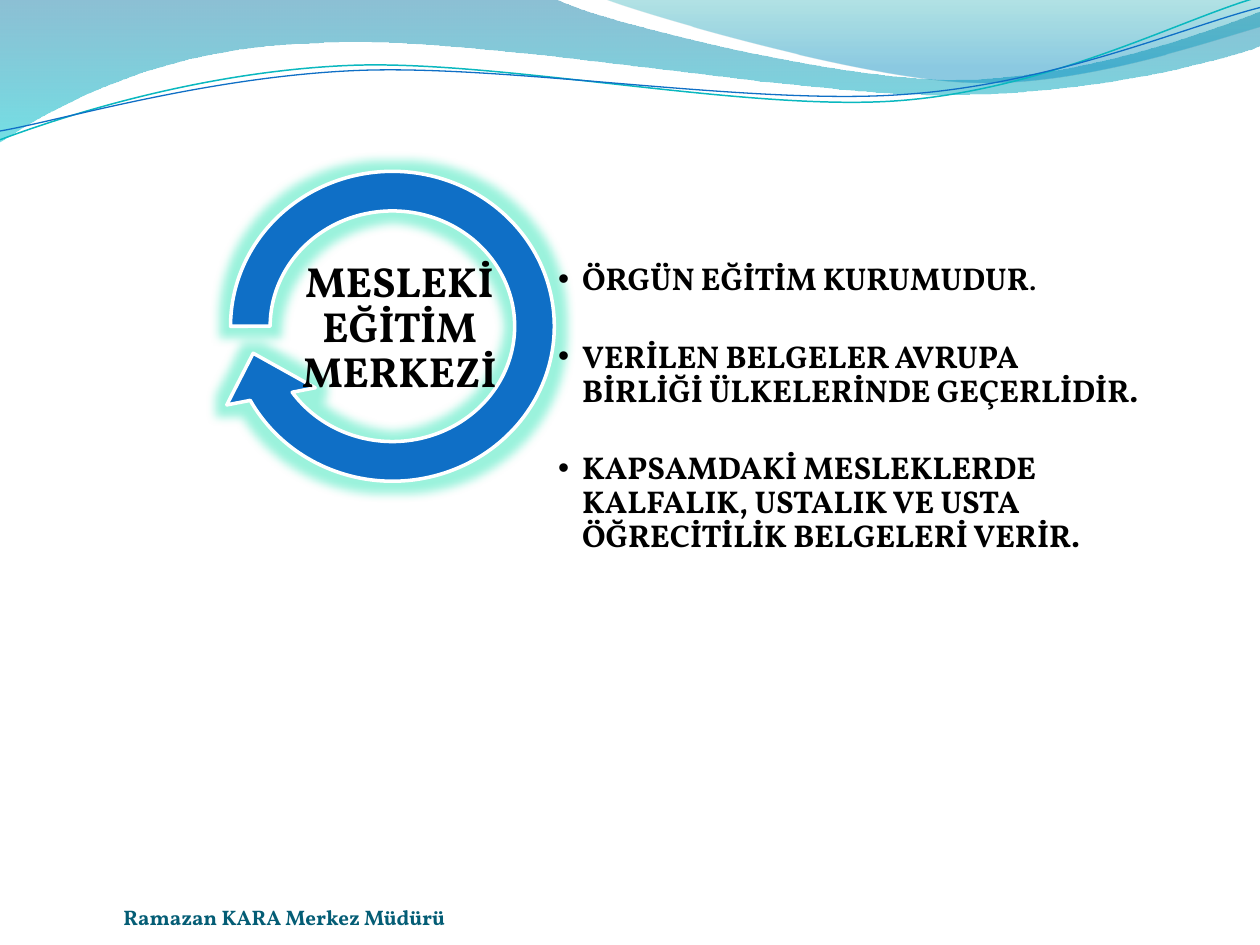
from lxml import etree
from pptx import Presentation
from pptx.dml.color import RGBColor
from pptx.enum.shapes import MSO_SHAPE
from pptx.enum.text import MSO_ANCHOR, MSO_AUTO_SIZE, PP_ALIGN
from pptx.oxml import parse_xml
from pptx.oxml.ns import nsdecls, qn
from pptx.util import Inches, Pt

CIRCULAR_ARROW = MSO_SHAPE.CIRCULAR_ARROW
MIDDLE, BOTTOM = MSO_ANCHOR.MIDDLE, MSO_ANCHOR.BOTTOM
LEFT, CENTER = PP_ALIGN.LEFT, PP_ALIGN.CENTER
NO_AUTOFIT = MSO_AUTO_SIZE.NONE

COLUMNS = 10
STEPS_PER_CELL = 1000
COLORS = {
    "text": "000000", "footer": "045D75", "arrow": "0F6FC6", "white": "FFFFFF",
    "glow": "05E0A8", "teal": "0AB8BF", "wave_blue": "0074A1", "wave_cyan": "00C6CF",
    "crest_teal": "00A1A9", "crest_blue": "008BBF",
}
BULLETS = [
    ("ÖRGÜN EĞİTİM KURUMUDUR", "."),
    ("VERİLEN BELGELER AVRUPA BİRLİĞİ ÜLKELERİNDE GEÇERLİDİR.", ""),
    ("KAPSAMDAKİ MESLEKLERDE KALFALIK, USTALIK VE USTA ÖĞRECİTİLİK BELGELERİ VERİR.", ""),
]

# A segment of two numbers is straight, one of six is a Bézier curve.
WAVE = [
    (0, 0), (4.4, -0.01), (4.76, 0.17, 6.64, 0.63, 7.58, 0.63),
    (8.53, 0.63, 9.58, 0.26, 10, 0.09), (10.01, 0.36),
    (9.83, 0.44, 8.7, 0.76, 7.46, 0.75), (6.22, 0.75, 3.82, 0.28, 2.57, 0.34),
    (1.29, 0.36, 0.46, 0.83, -0.01, 1.13), (0, 0),
]
CREST = [
    (4.79, -0.01), (5.09, 0.11, 6.82, 0.62, 7.69, 0.65),
    (8.56, 0.69, 9.61, 0.32, 10, 0.21), (10, 0), (4.79, -0.01),
]
TEAL_LINE = [
    (0, 1.11), (0.48, 0.93, 1.58, 0.57, 2.77, 0.52),
    (3.95, 0.47, 5.93, 0.89, 7.13, 0.8), (8.33, 0.71, 9.38, 0.15, 9.98, -0.02),
]
BLUE_LINE = [
    (0, 1.04), (0.47, 0.96, 1.64, 0.61, 2.83, 0.56),
    (4.03, 0.51, 5.97, 0.84, 7.17, 0.75), (8.36, 0.67, 9.41, 0.21, 10, 0.06),
]


class SlideBuilder:
    """Style and current slide; lengths are in grid cells, ten columns across."""

    font = "Vollkorn"

    def __init__(self, presentation):
        self.unit = presentation.slide_width / COLUMNS
        self.slide = presentation.slides.add_slide(presentation.slide_layouts[1])
        self.shapes = self.slide.shapes

    def color(self, name):
        return RGBColor.from_string(COLORS[name])

    def place(self, shape, box):
        shape.left, shape.top, shape.width, shape.height = (
            round(value * self.unit) for value in box)

    def outline(self, segments, close):
        """Build a freeform through the segment ends, then bend its curved segments."""
        segments = [[round(value * STEPS_PER_CELL) for value in segment]
                    for segment in segments]
        ends = [segment[-2:] for segment in segments]
        left, top = (min(values) for values in zip(*ends))
        builder = self.shapes.build_freeform(*ends[0], scale=self.unit / STEPS_PER_CELL)
        builder.add_line_segments(ends[1:], close=close)
        shape = builder.convert_to_shape()
        shape.shadow.inherit = False
        straight_lines = list(shape._element.iter(qn("a:lnTo")))
        for line, segment in zip(straight_lines, segments[1:]):
            if len(segment) == 6:
                curve = etree.Element(qn("a:cubicBezTo"))
                for x, y in zip(segment[::2], segment[1::2]):
                    etree.SubElement(curve, qn("a:pt"), x=str(x - left), y=str(y - top))
                line.getparent().replace(line, curve)
        return shape

    def wave(self, segments, stops):
        """Fill an outline with a downward gradient of (position, colour, opacity)."""
        shape = self.outline(segments, True)
        shape.line.fill.background()
        stop_xml = "".join(
            f'<a:gs pos="{position * 1000}"><a:srgbClr val="{COLORS[name]}">'
            f'<a:alpha val="{opacity * 1000}"/></a:srgbClr></a:gs>'
            for position, name, opacity in stops)
        gradient = parse_xml(
            f'<a:gradFill {nsdecls("a")} rotWithShape="1"><a:gsLst>{stop_xml}</a:gsLst>'
            '<a:lin ang="5400000" scaled="0"/></a:gradFill>')
        shape._element.spPr.find(qn("a:custGeom")).addnext(gradient)

    def curve(self, segments, color, width):
        shape = self.outline(segments, False)
        shape.fill.background()
        shape.line.color.rgb = self.color(color)
        shape.line.width = Pt(width)

    def glowing_arrow(self, box, adjustments):
        shape = self.shapes.add_shape(CIRCULAR_ARROW, 0, 0, 0, 0)
        self.place(shape, box)
        for index, value in enumerate(adjustments):
            shape.adjustments[index] = value
        shape.fill.solid()
        shape.fill.fore_color.rgb = self.color("arrow")
        shape.line.color.rgb = self.color("white")
        shape.line.width = Pt(2)
        shape.shadow.inherit = False
        effects = shape._element.spPr.find(qn("a:effectLst"))
        glow = etree.SubElement(effects, qn("a:glow"), rad=str(Pt(11)))
        tint = etree.SubElement(glow, qn("a:srgbClr"), val=COLORS["glow"])
        etree.SubElement(tint, qn("a:alpha"), val="40000")

    def frame(self, shape, box, anchor, inset):
        self.place(shape, box)
        frame = shape.text_frame
        frame.word_wrap = True
        frame.auto_size = NO_AUTOFIT
        frame.vertical_anchor = anchor
        frame.margin_left = frame.margin_right = Inches(inset)
        frame.margin_top = frame.margin_bottom = Inches(inset)
        return frame

    def style(self, paragraph, size, color="text", align=LEFT, spacing=0.9, before=0):
        paragraph.alignment = align
        paragraph.line_spacing = spacing
        paragraph.space_before = Pt(before)
        font = paragraph.font
        font.name, font.size, font.bold = self.font, Pt(size), True
        font.color.rgb = self.color(color)

    def placeholder(self, index, box):
        """Move a placeholder to its box and to the front."""
        shape = self.slide.placeholders[index]
        self.shapes._spTree.append(shape._element)
        return self.frame(shape, box, MIDDLE, 0.02)

    def title(self, text, box):
        frame = self.placeholder(0, box)
        frame.text = text
        self.style(frame.paragraphs[0], 24, align=CENTER)

    def bullets(self, items, box):
        frame = self.placeholder(1, box)
        for index, (text, light_ending) in enumerate(items):
            paragraph = frame.add_paragraph() if index else frame.paragraphs[0]
            paragraph.add_run().text = text
            if light_ending:
                ending = paragraph.add_run()
                ending.text = light_ending
                ending.font.bold = False
            self.style(paragraph, 18, before=25 if index else 0)
            properties = paragraph._p.get_or_add_pPr()
            properties.set("marL", str(Inches(0.19)))
            properties.set("indent", str(Inches(-0.19)))

    def footer(self, text, box):
        frame = self.frame(self.shapes.add_textbox(0, 0, 0, 0), box, BOTTOM, 0)
        frame.text = text
        self.style(frame.paragraphs[0], 12, color="footer", spacing=1.0)


def main():
    presentation = Presentation()
    presentation.slide_width, presentation.slide_height = Inches(10), Inches(7.5)
    slide = SlideBuilder(presentation)
    slide.wave(WAVE, [(0, "wave_blue", 45), (100, "wave_cyan", 55)])
    slide.wave(CREST, [(0, "crest_teal", 30), (80, "crest_blue", 45)])
    slide.curve(TEAL_LINE, "teal", 0.85)
    slide.curve(BLUE_LINE, "arrow", 0.75)
    slide.footer("Ramazan KARA Merkez Müdürü", (0.98, 6.98, 2.6, 0.4))
    slide.glowing_arrow((1.63, 1.16, 2.97, 2.86), (0.11, 11.42, 90, 108, 0.125))
    slide.bullets(BULLETS, (4.41, 0.99, 4.66, 4.51))
    slide.title("MESLEKİ EĞİTİM MERKEZİ", (2, 2.03, 2.34, 1.16))
    presentation.save("out.pptx")


if __name__ == "__main__":
    main()
